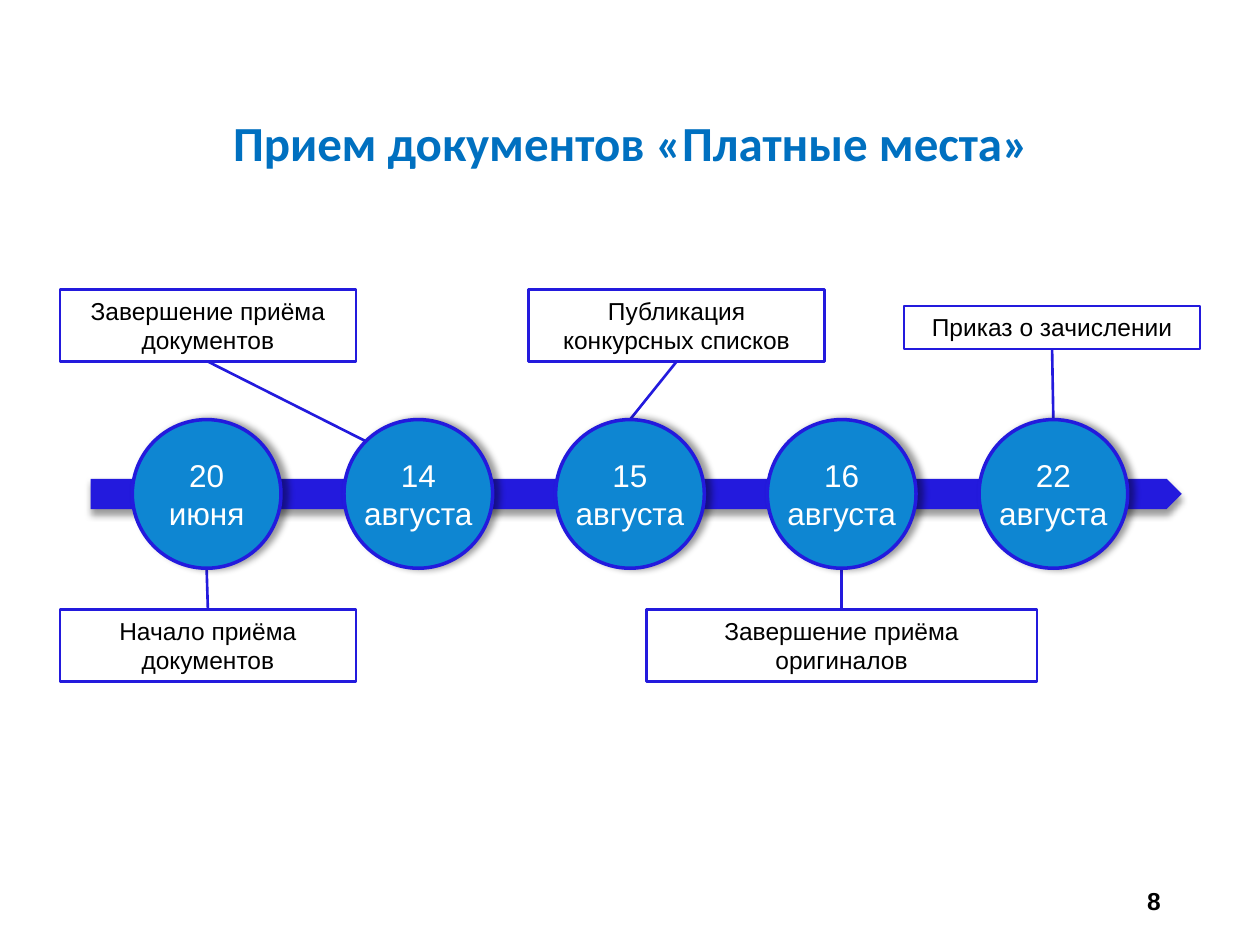
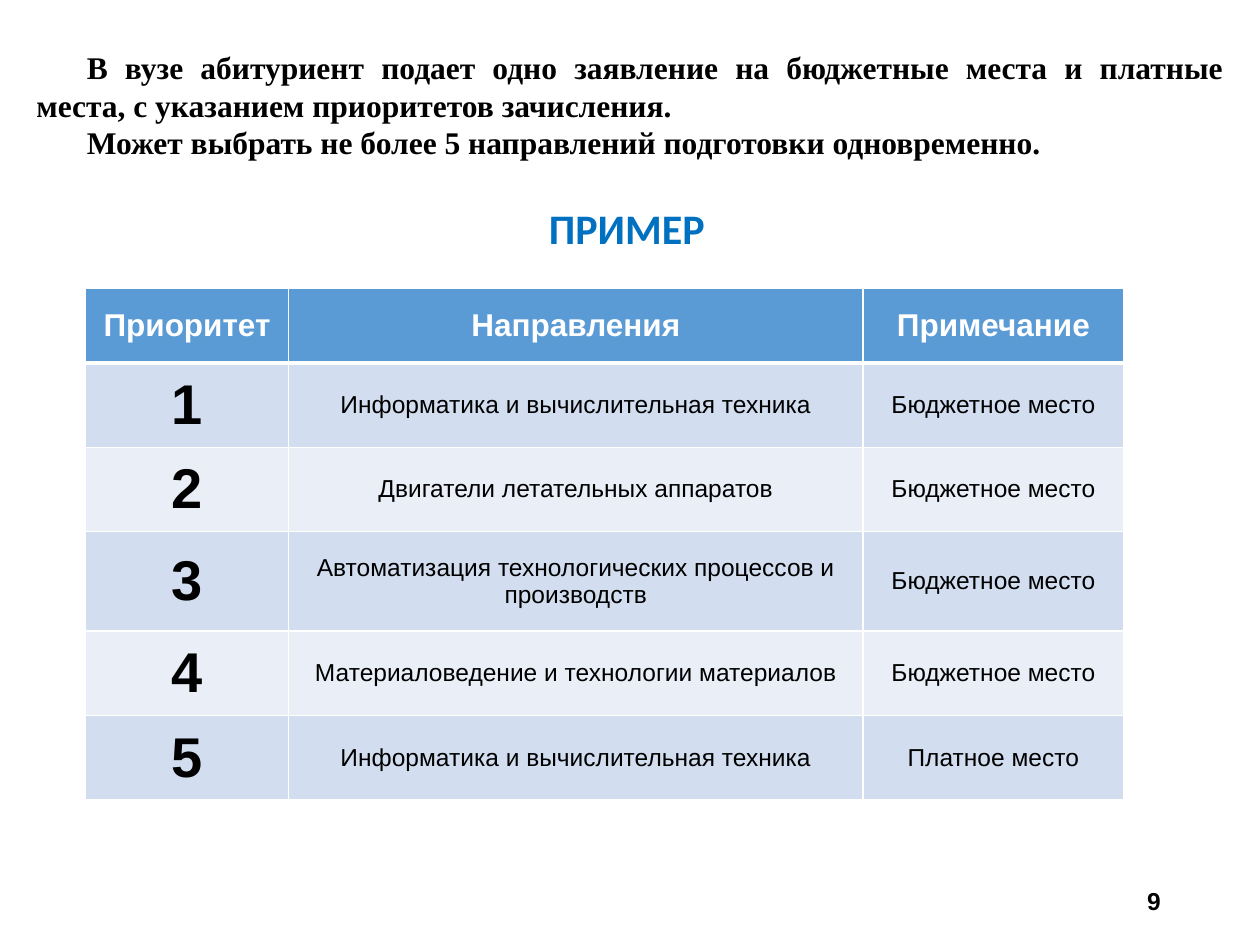
"""Builds two admission slides: a timeline of dates and a table of priorities."""
from dataclasses import dataclass

from lxml import etree
from pptx import Presentation
from pptx.dml.color import RGBColor
from pptx.enum.shapes import MSO_CONNECTOR, MSO_SHAPE
from pptx.enum.text import MSO_ANCHOR, PP_ALIGN
from pptx.oxml.ns import qn
from pptx.util import Inches, Pt

CENTER, RIGHT, JUSTIFY = PP_ALIGN.CENTER, PP_ALIGN.RIGHT, PP_ALIGN.JUSTIFY
TOP, MIDDLE = MSO_ANCHOR.TOP, MSO_ANCHOR.MIDDLE
RECTANGLE, OVAL, PENTAGON = MSO_SHAPE.RECTANGLE, MSO_SHAPE.OVAL, MSO_SHAPE.PENTAGON
STRAIGHT = MSO_CONNECTOR.STRAIGHT


@dataclass(frozen=True)
class Theme:
    heading: RGBColor = RGBColor(0x00, 0x70, 0xC0)
    line: RGBColor = RGBColor(0x23, 0x1A, 0xDD)
    circle: RGBColor = RGBColor(0x0E, 0x86, 0xD2)
    header: RGBColor = RGBColor(0x5B, 0x9B, 0xD5)
    odd_row: RGBColor = RGBColor(0xD2, 0xDE, 0xEF)
    even_row: RGBColor = RGBColor(0xEA, 0xEF, 0xF7)
    black: RGBColor = RGBColor(0, 0, 0)
    white: RGBColor = RGBColor(255, 255, 255)
    heading_font: str = "Calibri"
    body_font: str = "Arial"
    intro_font: str = "Times New Roman"
    title_size: int = 28
    subtitle_size: int = 24
    large_size: int = 18
    body_size: int = 14
    number_size: int = 32


theme = Theme()
deck = Presentation()
deck.slide_width, deck.slide_height = Inches(10), Inches(7.5)
COLUMN, ROW = deck.slide_width / 100, deck.slide_height / 75


def grid(left, top, width, height):
    return [round(left * COLUMN), round(top * ROW), round(width * COLUMN), round(height * ROW)]


def write(holder, lines, size, color, font=theme.body_font, bold=False,
          align=CENTER, anchor=TOP, wrap=True):
    frame = holder.text_frame
    frame.word_wrap = wrap
    frame.vertical_anchor = anchor
    frame.text = "\n".join(lines)
    for para in frame.paragraphs:
        para.alignment = align
        para.font.name = font
        para.font.size = Pt(size)
        para.font.bold = bold
        para.font.color.rgb = color
    return frame


timeline, example = [deck.slides.add_slide(deck.slide_layouts[6]) for _ in range(2)]

title = timeline.shapes.add_textbox(*grid(17.1, 8.4, 65.9, 5.7))
write(title, ["Прием документов «Платные места»"], theme.title_size, theme.heading,
      theme.heading_font, True, wrap=False)

AXIS, RADIUS, STEP = 39.2, 5.9, 16.8
UPPER, LOWER = 23, 48.4
DIAGONAL = RADIUS * 0.71
events = [
    ("20", "июня", "Начало приёма документов", (16.5, LOWER, 23.5, 5.7), (0, RADIUS)),
    ("14", "августа", "Завершение приёма документов", (16.5, UPPER, 23.5, 5.7),
     (-DIAGONAL, -DIAGONAL)),
    ("15", "августа", "Публикация конкурсных списков", (53.7, UPPER, 23.5, 5.7), (0, -RADIUS)),
    ("16", "августа", "Завершение приёма оригиналов", (66.8, LOWER, 31, 5.7), (0, RADIUS)),
    ("22", "августа", "Приказ о зачислении", (83.5, 24.3, 23.5, 3.4), (0, -RADIUS)),
]
centers = [50 + (index - 2) * STEP for index in range(len(events))]

for center, (day, month, label, (middle, top, width, height), (across, down)) in zip(centers, events):
    box = timeline.shapes.add_shape(RECTANGLE, *grid(middle - width / 2, top, width, height))
    box.shadow.inherit = False
    box.fill.background()
    box.line.color.rgb = theme.line
    box.line.width = Pt(1.5)
    write(box, [label], theme.body_size, theme.black)
    edge = top if top > AXIS else top + height
    link = timeline.shapes.add_connector(
        STRAIGHT, *grid(center + across, AXIS + down, middle, edge))
    link.line.color.rgb = theme.line
    link.line.width = Pt(1.5)
    etree.SubElement(link._element.spPr, qn("a:effectLst"))

arrow = timeline.shapes.add_shape(PENTAGON, *grid(7.2, AXIS - 1.2, 86.6, 2.4))
arrow.fill.solid()
arrow.fill.fore_color.rgb = theme.line
arrow.line.fill.background()
raised = [(arrow, 90)]

for center, (day, month, *_) in zip(centers, events):
    circle = timeline.shapes.add_shape(
        OVAL, *grid(center - RADIUS, AXIS - RADIUS, 2 * RADIUS, 2 * RADIUS))
    circle.fill.solid()
    circle.fill.fore_color.rgb = theme.circle
    circle.line.color.rgb = theme.line
    circle.line.width = Pt(2)
    write(circle, [day, month], theme.large_size, theme.white, anchor=MIDDLE, wrap=False)
    raised.append((circle, 0))

for shape, angle in raised:
    shape.shadow.inherit = False
    effects = shape._element.spPr.find(qn("a:effectLst"))
    shadow = etree.SubElement(effects, qn("a:outerShdw"), blurRad=str(Pt(4)), dist=str(Pt(3)),
                              dir=str(angle * 60000), rotWithShape="0")
    tint = etree.SubElement(shadow, qn("a:srgbClr"), val=str(theme.black))
    etree.SubElement(tint, qn("a:alpha"), val="40000")

intro = example.shapes.add_textbox(*grid(1.9, 3.3, 96.2, 10.1))
intro_frame = write(intro, [
    "В вузе абитуриент подает одно заявление на бюджетные места и платные места, "
    "с указанием приоритетов зачисления.",
    "Может выбрать не более 5 направлений подготовки одновременно.",
], theme.large_size, theme.black, theme.intro_font, True, JUSTIFY)
for para in intro_frame.paragraphs:
    para._p.get_or_add_pPr().set("indent", str(Inches(0.4)))

subtitle = example.shapes.add_textbox(*grid(6.8, 15.6, 85.9, 5))
write(subtitle, ["ПРИМЕР"], theme.subtitle_size, theme.heading, theme.heading_font, True)

BUDGET, PAID = "Бюджетное место", "Платное место"
rows = [
    ("Приоритет", "Направления", "Примечание"),
    ("1", "Информатика и вычислительная техника", BUDGET),
    ("2", "Двигатели летательных аппаратов", BUDGET),
    ("3", "Автоматизация технологических процессов и производств", BUDGET),
    ("4", "Материаловедение и технологии материалов", BUDGET),
    ("5", "Информатика и вычислительная техника", PAID),
]
widths, heights = [16.1, 45.6, 20.7], [5.9, 6.7, 6.7, 7.9, 6.7, 6.7]
table = example.shapes.add_table(
    len(rows), len(widths), *grid(6.8, 22.9, sum(widths), sum(heights))).table
for column, width in zip(table.columns, widths):
    column.width = round(width * COLUMN)
for row, height in zip(table.rows, heights):
    row.height = round(height * ROW)

for row_index, texts in enumerate(rows):
    heading_row = row_index == 0
    band = theme.header if heading_row else theme.odd_row if row_index % 2 else theme.even_row
    borders = {"lnL": 1, "lnR": 1, "lnT": 3 if row_index == 1 else 1, "lnB": 3 if heading_row else 1}
    for column_index, text in enumerate(texts):
        cell = table.cell(row_index, column_index)
        first = column_index == 0
        size = theme.large_size if heading_row else theme.number_size if first else theme.body_size
        write(cell, [text], size, theme.white if heading_row else theme.black,
              bold=heading_row or first)
        cell.vertical_anchor = MIDDLE
        for side, weight in borders.items():
            border = etree.SubElement(cell._tc.get_or_add_tcPr(), qn(f"a:{side}"), w=str(Pt(weight)))
            paint = etree.SubElement(border, qn("a:solidFill"))
            etree.SubElement(paint, qn("a:srgbClr"), val=str(theme.white))
        cell.fill.solid()
        cell.fill.fore_color.rgb = band

for number, page in enumerate([timeline, example], start=8):
    footer = page.shapes.add_textbox(*grid(70.6, 69.5, 22.5, 4))
    write(footer, [str(number)], theme.body_size, theme.black, bold=True, align=RIGHT, anchor=MIDDLE)

deck.save("out.pptx")
